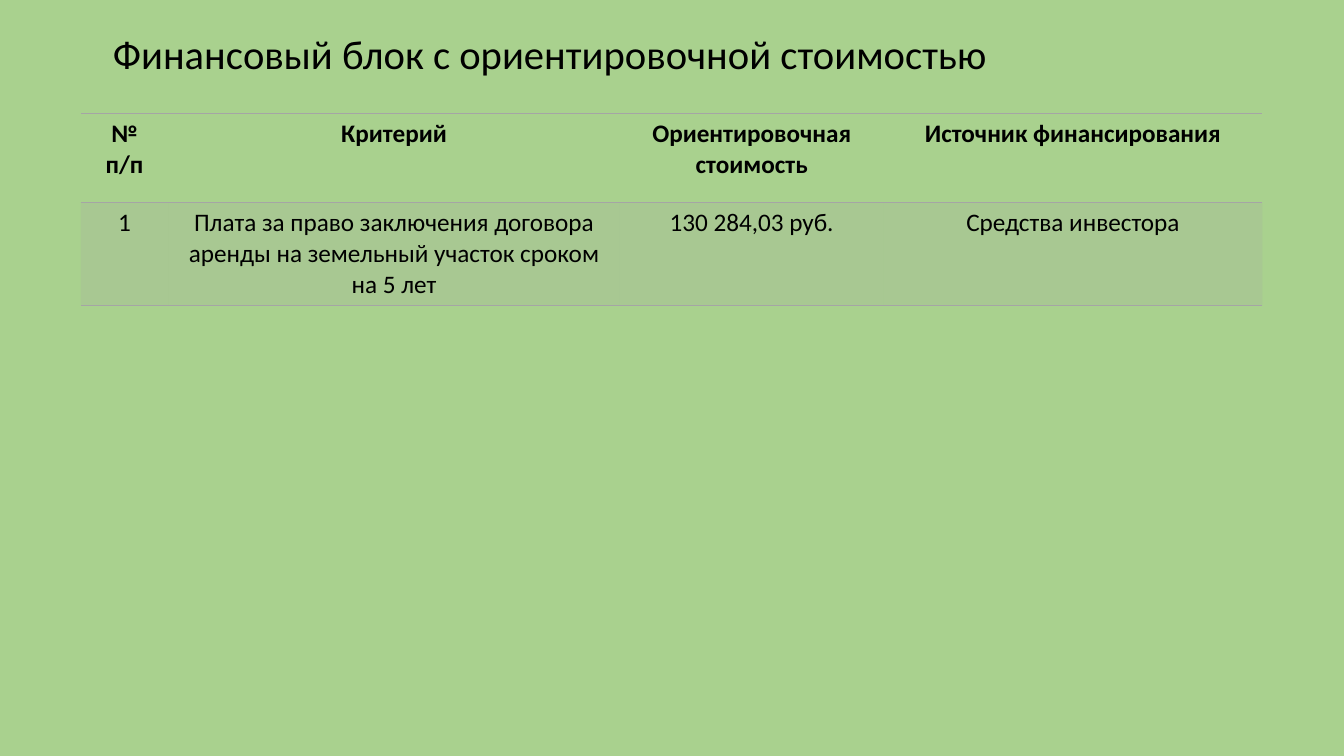
from dataclasses import dataclass

from lxml import etree
from pptx import Presentation
from pptx.dml.color import RGBColor
from pptx.enum.text import MSO_ANCHOR, PP_ALIGN
from pptx.oxml.ns import qn
from pptx.util import Pt

CENTER = PP_ALIGN.CENTER
MIDDLE = MSO_ANCHOR.MIDDLE
NO_STYLE = "{2D5ABB26-0587-4C30-8999-92F81FD0307C}"


@dataclass(frozen=True)
class Theme:
    font: str = "Calibri"
    background: str = "A9D18E"
    text: str = "000000"
    grey: str = "A5A5A5"
    band_opacity: int = 20
    title_size: int = 29
    table_size: int = 18
    rule_width: int = 1


THEME = Theme()


def format_text(para, size, bold=False):
    for span in para.runs:
        span.font.name = THEME.font
        span.font.size = Pt(size)
        span.font.bold = bold
        span.font.color.rgb = RGBColor.from_string(THEME.text)


def add_rule(cell, side):
    line = etree.SubElement(cell._tc.get_or_add_tcPr(), qn(f"a:{side}"))
    line.set("w", str(Pt(THEME.rule_width)))
    fill = etree.SubElement(line, qn("a:solidFill"))
    etree.SubElement(fill, qn("a:srgbClr")).set("val", THEME.grey)


# Page
deck = Presentation()
deck.slide_width, deck.slide_height = Pt(960), Pt(540)
page = deck.slides.add_slide(deck.slide_layouts[6])
page.background.fill.solid()
page.background.fill.fore_color.rgb = RGBColor.from_string(THEME.background)

# Title
box = page.shapes.add_textbox(Pt(73.5), Pt(10), Pt(828), Pt(60.5))
frame = box.text_frame
frame.word_wrap = True
frame.vertical_anchor = MIDDLE
frame.text = "Финансовый блок с ориентировочной стоимостью"
frame.paragraphs[0].line_spacing = 0.9
format_text(frame.paragraphs[0], THEME.title_size)

# Cost table
rows = [
    ["№ п/п", "Критерий", "Ориентировочная стоимость", "Источник финансирования"],
    ["1", "Плата за право заключения договора аренды на земельный участок сроком на 5 лет",
     "130 284,03 руб.", "Средства инвестора"],
]
column_widths = [62.5, 322.5, 188.5, 270.5]
row_heights = [63.5, 73.5]
holder = page.shapes.add_table(len(rows), len(column_widths), Pt(57.75), Pt(81.25),
                               Pt(sum(column_widths)), Pt(sum(row_heights)))
table = holder.table
table.horz_banding = False
table._tbl.tblPr.find(qn("a:tableStyleId")).text = NO_STYLE
for column, width in zip(table.columns, column_widths):
    column.width = Pt(width)

for index, values in enumerate(rows):
    header = index == 0
    table.rows[index].height = Pt(row_heights[index])
    for cell, value in zip(table.rows[index].cells, values):
        cell.text = value
        para = cell.text_frame.paragraphs[0]
        para.alignment = CENTER
        format_text(para, THEME.table_size, bold=header)

        # Horizontal rules come before the fill in the cell properties
        add_rule(cell, "lnT")
        add_rule(cell, "lnB")
        if header:
            cell.fill.background()
        else:
            cell.fill.solid()
            cell.fill.fore_color.rgb = RGBColor.from_string(THEME.grey)
            tint = cell._tc.tcPr.find(qn("a:solidFill")).find(qn("a:srgbClr"))
            etree.SubElement(tint, qn("a:alpha")).set("val", str(THEME.band_opacity * 1000))

deck.save("out.pptx")
